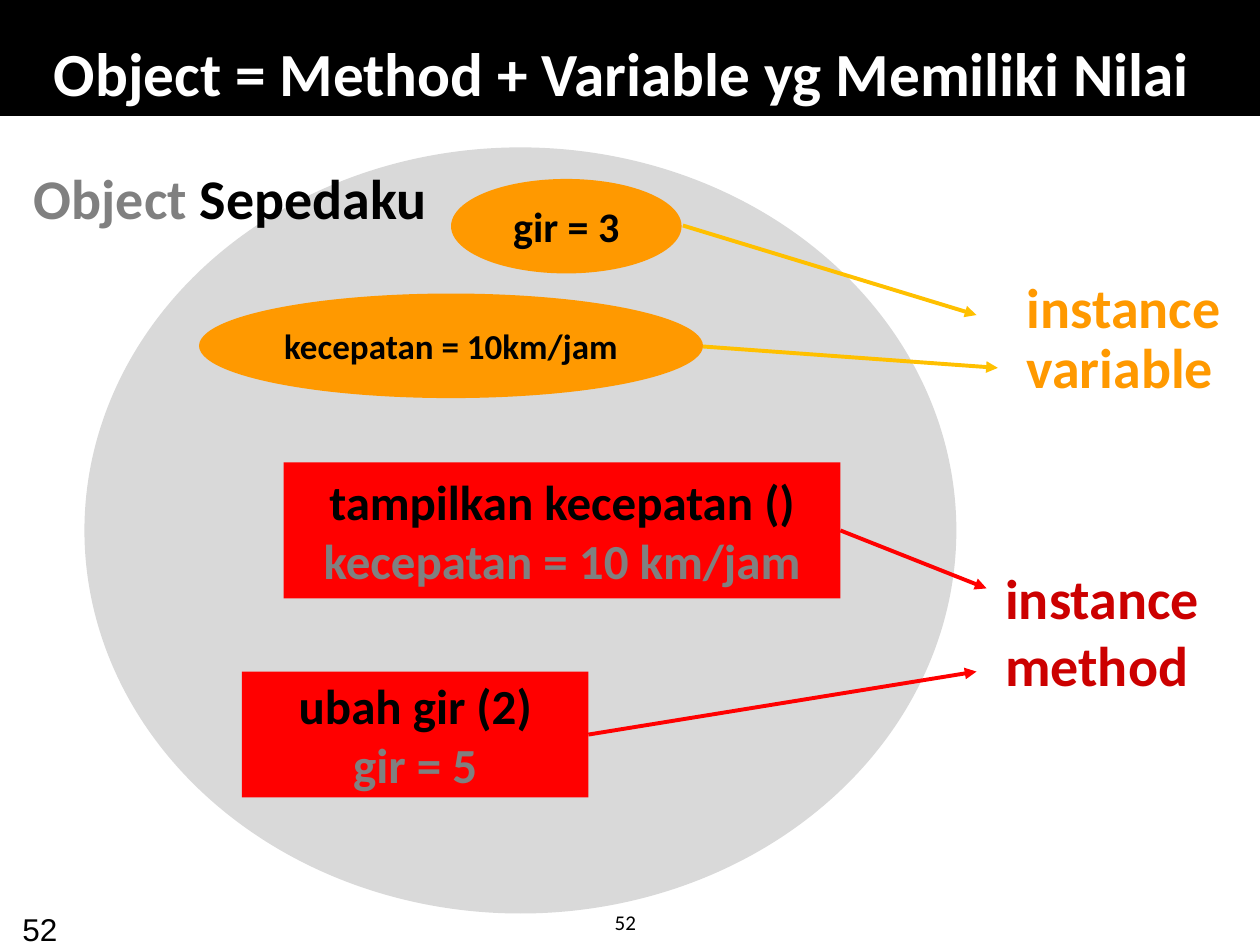
from dataclasses import dataclass

from pptx import Presentation
from pptx.dml.color import RGBColor
from pptx.enum import shapes, text
from pptx.oxml.ns import qn
from pptx.slide import Slide
from pptx.util import Inches, Pt

COLORS = {
    "black": "000000",
    "white": "FFFFFF",
    "gray": "808080",
    "object": "D9D9D9",
    "variable": "FF9900",
    "method": "FF0000",
    "method_label": "CC0000",
    "variable_arrow": "FFC000",
}
OVAL = shapes.MSO_SHAPE.OVAL
RECTANGLE = shapes.MSO_SHAPE.RECTANGLE
TOP = text.MSO_ANCHOR.TOP
MIDDLE = text.MSO_ANCHOR.MIDDLE
BOTTOM = text.MSO_ANCHOR.BOTTOM

Box = tuple[float, float, float, float]
Point = tuple[float, float]
Line = list[tuple[str, str]]


@dataclass
class Label:
    box: Box
    line: Line
    size: int
    bold: bool = True
    font: str = "Calibri"
    anchor: text.MSO_ANCHOR = TOP
    wrap: bool = True
    indent: float = 0
    spacing: float = 1


@dataclass
class Member:
    kind: shapes.MSO_SHAPE
    box: Box
    fill: str
    lines: list[Line]
    size: int = 28


@dataclass
class Arrow:
    start: Point
    end: Point
    color: str


LABELS = [
    Label((0.33, 0.27, 9.42, 0.64),
          [("Object = Method + Variable yg Memiliki Nilai", "white")], 35, anchor=BOTTOM),
    Label((7.67, 2.17, 2.67, 0.58), [("instance variable", "variable")], 32,
          indent=0.38, spacing=0.9),
    Label((7.5, 4.42, 2.67, 0.58), [("instance method", "method_label")], 32, indent=0.38),
    Label((0.17, 1.25, 3.67, 0.64), [("Object ", "gray"), ("Sepedaku", "black")], 32),
    Label((4.78, 7.17, 0.41, 0.3), [("52", "black")], 12, bold=False, wrap=False),
    Label((0.08, 7.17, 2.33, 0.25), [("52", "black")], 18, bold=False, font="Arial"),
]

MEMBERS = [
    Member(RECTANGLE, (0, 0, 10, 0.92), "black", []),
    Member(OVAL, (0.67, 1.17, 6.92, 6.08), "object", []),
    Member(OVAL, (1.58, 2.33, 4, 0.83), "variable", [[("kecepatan = 10km/jam", "black")]], 20),
    Member(OVAL, (3.58, 1.42, 1.83, 0.75), "variable", [[("gir = 3", "black")]], 24),
    Member(RECTANGLE, (2.25, 3.67, 4.42, 1.08), "method",
           [[("tampilkan kecepatan ()", "black")], [("kecepatan = 10 km/jam", "gray")]]),
    Member(RECTANGLE, (1.92, 5.33, 2.75, 1), "method",
           [[("ubah gir (2)", "black")], [("gir = 5", "gray")]]),
]

ARROWS = [
    Arrow((5.42, 1.79), (7.75, 2.5), "variable_arrow"),
    Arrow((5.58, 2.75), (7.92, 2.92), "variable_arrow"),
    Arrow((6.67, 4.21), (7.83, 4.67), "method"),
    Arrow((4.67, 5.83), (7.75, 5.33), "method"),
]


def rgb(name: str) -> RGBColor:
    return RGBColor.from_string(COLORS[name])


def add_runs(paragraph, line: Line, size: int, bold: bool = True, font: str = "Calibri") -> None:
    for words, color in line:
        run = paragraph.add_run()
        run.text = words
        run.font.name = font
        run.font.size = Pt(size)
        run.font.bold = bold
        run.font.color.rgb = rgb(color)


def draw_member(slide: Slide, member: Member) -> None:
    shape = slide.shapes.add_shape(member.kind, *map(Inches, member.box))
    shape.shadow.inherit = False
    shape.fill.solid()
    shape.fill.fore_color.rgb = rgb(member.fill)
    shape.line.fill.background()
    frame = shape.text_frame
    frame.word_wrap = False
    frame.vertical_anchor = MIDDLE
    for index, line in enumerate(member.lines):
        paragraph = frame.add_paragraph() if index else frame.paragraphs[0]
        paragraph.alignment = text.PP_ALIGN.CENTER
        add_runs(paragraph, line, member.size)


def draw_arrow(slide: Slide, arrow: Arrow) -> None:
    connector = slide.shapes.add_connector(
        shapes.MSO_CONNECTOR.STRAIGHT, *map(Inches, arrow.start + arrow.end))
    connector.line.color.rgb = rgb(arrow.color)
    connector.line.width = Pt(2.25)
    properties = connector.element.spPr
    outline = properties.find(qn("a:ln"))
    outline.append(outline.makeelement(qn("a:tailEnd"), {"type": "triangle"}))
    properties.append(properties.makeelement(qn("a:effectLst"), {}))


def draw_label(slide: Slide, label: Label) -> None:
    frame = slide.shapes.add_textbox(*map(Inches, label.box)).text_frame
    frame.word_wrap = label.wrap
    frame.vertical_anchor = label.anchor
    paragraph = frame.paragraphs[0]
    paragraph.line_spacing = label.spacing
    if label.indent:
        paragraph._p.get_or_add_pPr().set("marL", str(Inches(label.indent)))
    add_runs(paragraph, label.line, label.size, label.bold, label.font)


def main() -> None:
    presentation = Presentation()
    presentation.slide_width = Inches(10)
    presentation.slide_height = Inches(7.5)
    slide = presentation.slides.add_slide(presentation.slide_layouts[6])
    for member in MEMBERS:
        draw_member(slide, member)
    for arrow in ARROWS:
        draw_arrow(slide, arrow)
    for label in LABELS:
        draw_label(slide, label)
    presentation.save("out.pptx")


if __name__ == "__main__":
    main()
